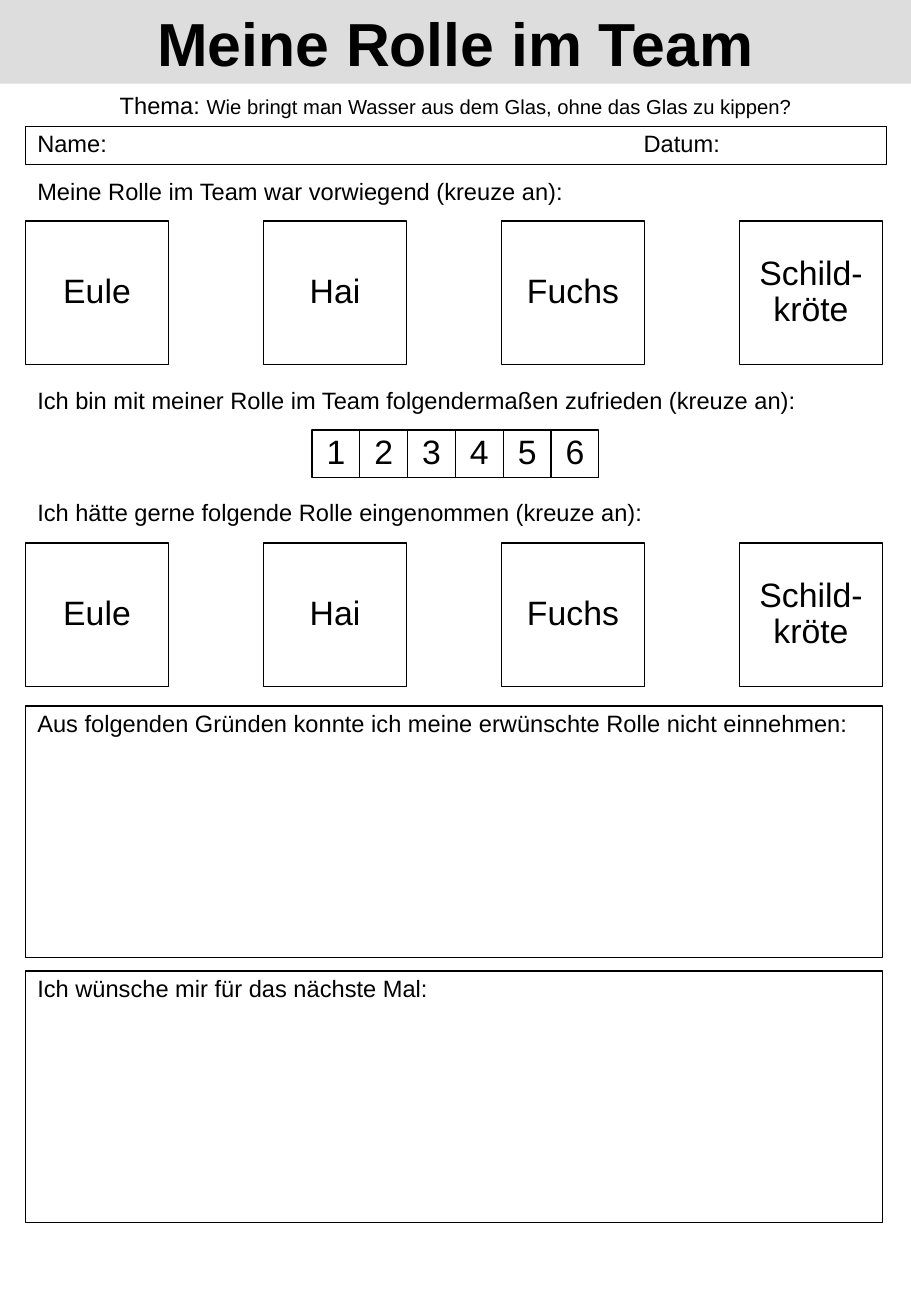
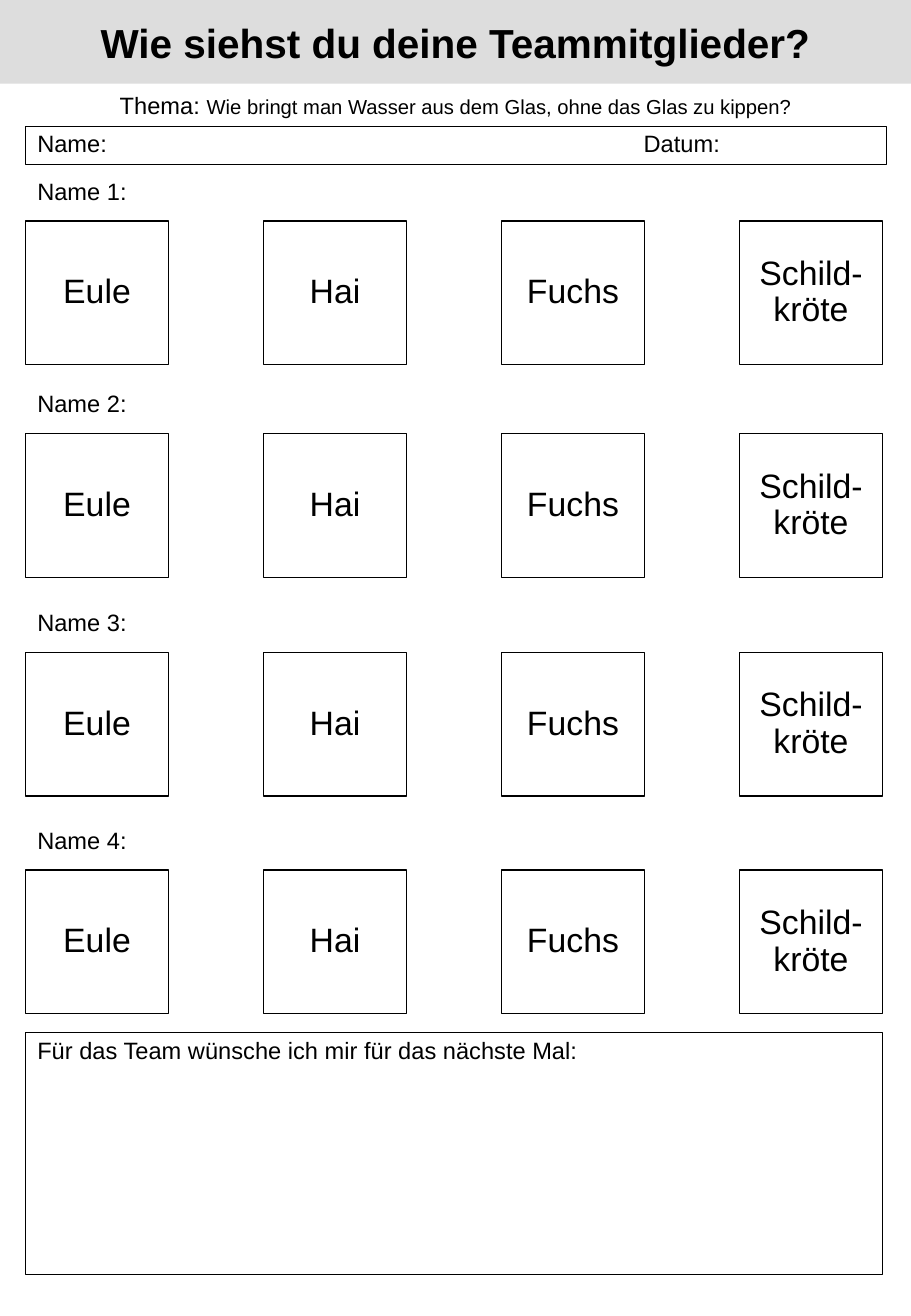
from pptx import Presentation
from pptx.dml.color import RGBColor
from pptx.enum.shapes import MSO_SHAPE as Preset
from pptx.enum.text import MSO_ANCHOR as Anchor, PP_ALIGN as Align
from pptx.oxml.ns import qn
from pptx.util import Cm, Pt
from lxml import etree

BLACK = RGBColor(0x00, 0x00, 0x00)
BAND_GRAY = RGBColor(0xDD, 0xDD, 0xDD)
FONT = "Arial"

# Measurements in centimetres
PAGE_WIDTH, PAGE_HEIGHT = 19.05, 27.51
LEFT = 0.53
CONTENT_WIDTH = 17.93
HEADER_WIDTH = 18.01
LINE_HEIGHT = 0.8
ROLE_SIZE = 3
NUMBER_SIZE = 1

ROLES = ["Eule", "Hai", "Fuchs", "Schild-kröte"]
TOPIC = "Wie bringt man Wasser aus dem Glas, ohne das Glas zu kippen?"


def write_text(shape, *parts, size=14, bold=False, align=Align.LEFT,
               anchor=Anchor.TOP, spacing=0.9, tab=None):
    """Write parts, each a string or a (string, size) pair, as one paragraph."""
    frame = shape.text_frame
    frame.word_wrap = True
    frame.vertical_anchor = anchor
    paragraph = frame.paragraphs[0]
    paragraph.alignment = align
    paragraph.line_spacing = spacing
    if tab is not None:
        properties = paragraph._p.get_or_add_pPr()
        tab_list = etree.SubElement(properties, qn("a:tabLst"))
        etree.SubElement(tab_list, qn("a:tab"), pos=str(Cm(tab)), algn="l")
    for part in parts:
        text, part_size = (part, size) if isinstance(part, str) else part
        run = paragraph.add_run()
        run.text = text
        run.font.name = FONT
        run.font.size = Pt(part_size)
        run.font.bold = bold
        run.font.color.rgb = BLACK


class Worksheet:
    """Holds the shared style and the current slide."""

    def __init__(self):
        self.presentation = Presentation()
        self.presentation.slide_width = Cm(PAGE_WIDTH)
        self.presentation.slide_height = Cm(PAGE_HEIGHT)
        self.slide = None

    def new_page(self, title, title_size):
        layout = self.presentation.slide_layouts[6]
        self.slide = self.presentation.slides.add_slide(layout)

        # Title band
        self.box(0, 0, PAGE_WIDTH, 1.75, title, fill=BAND_GRAY, line=None,
                 size=title_size, bold=True, align=Align.CENTER,
                 anchor=Anchor.MIDDLE, spacing=1.0)

        # Topic, name and date
        self.label(1.85, "Thema: ", (TOPIC, 12), width=HEADER_WIDTH,
                   align=Align.CENTER)
        self.box(LEFT, 2.64, HEADER_WIDTH, LINE_HEIGHT, "Name:\tDatum:",
                 tab=12.68)

    def box(self, left, top, width, height, text, fill=None, line=BLACK,
            shapes=None, **text_format):
        shapes = shapes or self.slide.shapes
        shape = shapes.add_shape(Preset.RECTANGLE, Cm(left), Cm(top),
                                 Cm(width), Cm(height))
        shape.shadow.inherit = False
        if fill is None:
            shape.fill.background()
        else:
            shape.fill.solid()
            shape.fill.fore_color.rgb = fill
        if line is None:
            shape.line.fill.background()
        else:
            shape.line.color.rgb = line
            shape.line.width = Pt(0.75)
        write_text(shape, text, **text_format)

    def label(self, top, *parts, width=CONTENT_WIDTH, **text_format):
        shape = self.slide.shapes.add_textbox(Cm(LEFT), Cm(top), Cm(width),
                                              Cm(LINE_HEIGHT))
        write_text(shape, *parts, **text_format)

    def tick_boxes(self, left, top, size, step, texts, shapes=None):
        for index, text in enumerate(texts):
            self.box(left + index * step, top, size, size, text, shapes=shapes,
                     size=20, align=Align.CENTER, anchor=Anchor.MIDDLE)

    def role_question(self, top, question):
        self.label(top, question)
        step = (CONTENT_WIDTH - ROLE_SIZE) / (len(ROLES) - 1)
        self.tick_boxes(LEFT, top + 0.99, ROLE_SIZE, step, ROLES)

    def grade_question(self, top, question):
        self.label(top, question)
        grades = [str(grade) for grade in range(1, 7)]
        left = (PAGE_WIDTH - len(grades) * NUMBER_SIZE) / 2
        group = self.slide.shapes.add_group_shape()
        self.tick_boxes(left, top + 0.99, NUMBER_SIZE, NUMBER_SIZE, grades,
                        shapes=group.shapes)

    def answer_box(self, top, height, prompt):
        self.box(LEFT, top, CONTENT_WIDTH, height, prompt)


def main():
    sheet = Worksheet()

    # Own role
    sheet.new_page("Meine Rolle im Team", 36)
    sheet.role_question(3.63, "Meine Rolle im Team war vorwiegend (kreuze an):")
    sheet.grade_question(8, "Ich bin mit meiner Rolle im Team "
                            "folgendermaßen zufrieden (kreuze an):")
    sheet.role_question(10.36, "Ich hätte gerne folgende Rolle eingenommen "
                               "(kreuze an):")
    sheet.answer_box(14.76, 5.26, "Aus folgenden Gründen konnte ich meine "
                                  "erwünschte Rolle nicht einnehmen:")
    sheet.answer_box(20.3, 5.26, "Ich wünsche mir für das nächste Mal:")

    # Roles of the team members
    sheet.new_page("Wie siehst du deine Teammitglieder?", 24)
    for number, top in enumerate([3.63, 8.08, 12.65, 17.2], start=1):
        sheet.role_question(top, f"Name {number}:")
    sheet.answer_box(21.59, 5.05,
                     "Für das Team wünsche ich mir für das nächste Mal:")

    sheet.presentation.save("out.pptx")


if __name__ == "__main__":
    main()
